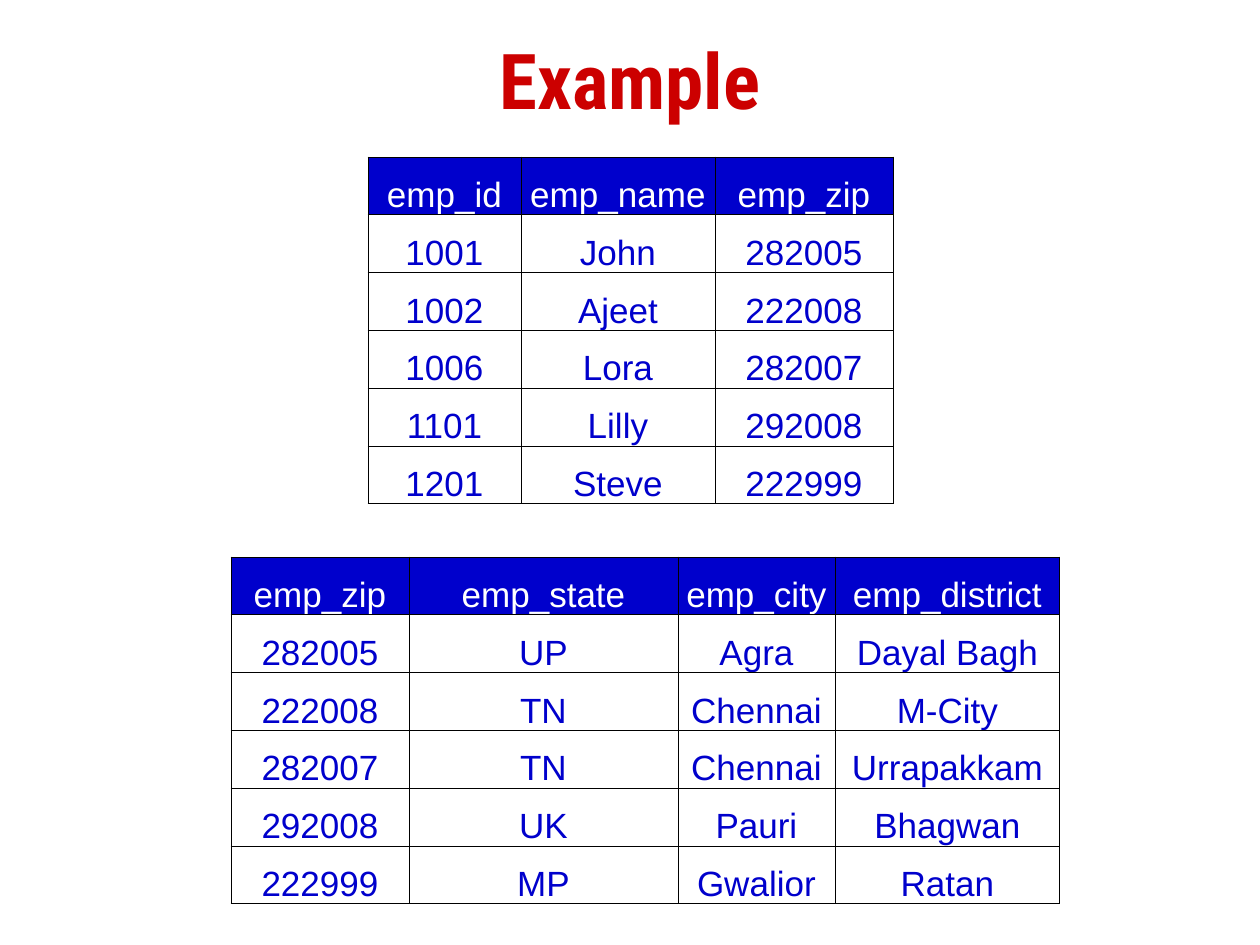
from lxml import etree
from pptx import Presentation
from pptx.dml.color import RGBColor
from pptx.enum.text import MSO_ANCHOR, PP_ALIGN
from pptx.oxml.ns import qn
from pptx.util import Pt

PX = 914400 / 126
RED = RGBColor(0xCC, 0x00, 0x00)
BLUE = RGBColor(0x00, 0x00, 0xCC)
WHITE = RGBColor(0xFF, 0xFF, 0xFF)
BLACK = RGBColor(0x00, 0x00, 0x00)
CENTER = PP_ALIGN.CENTER
MIDDLE, BOTTOM = MSO_ANCHOR.MIDDLE, MSO_ANCHOR.BOTTOM

TITLE = "Example"
TITLE_BOX = (95, 0, 1070, 158)
TABLE_HEIGHT = 347

EMPLOYEES = {
    "left": 368, "top": 157, "columns": [153, 194, 178],
    "rows": [
        ("emp_id", "emp_name", "emp_zip"),
        ("1001", "John", "282005"),
        ("1002", "Ajeet", "222008"),
        ("1006", "Lora", "282007"),
        ("1101", "Lilly", "292008"),
        ("1201", "Steve", "222999"),
    ],
}
ZIP_CODES = {
    "left": 231, "top": 557, "columns": [178, 269, 157, 225],
    "rows": [
        ("emp_zip", "emp_state", "emp_city", "emp_district"),
        ("282005", "UP", "Agra", "Dayal Bagh"),
        ("222008", "TN", "Chennai", "M-City"),
        ("282007", "TN", "Chennai", "Urrapakkam"),
        ("292008", "UK", "Pauri", "Bhagwan"),
        ("222999", "MP", "Gwalior", "Ratan"),
    ],
}


def emu(px):
    return round(px * PX)


def write(frame, text, *, size, font, color, bold=False, space_before=0):
    paragraph = frame.paragraphs[0]
    paragraph.alignment = CENTER
    paragraph.space_before = Pt(space_before)
    run = paragraph.add_run()
    run.text = text
    run.font.size = Pt(size)
    run.font.name = font
    run.font.bold = bold
    run.font.color.rgb = color


def add_borders(cell, color, width):
    """Outline all four sides; call before filling, as the schema puts lines first."""
    properties = cell._tc.get_or_add_tcPr()
    for side in ("a:lnL", "a:lnR", "a:lnT", "a:lnB"):
        line = etree.SubElement(properties, qn(side), w=str(Pt(width)))
        fill = etree.SubElement(line, qn("a:solidFill"))
        etree.SubElement(fill, qn("a:srgbClr"), val=str(color))


def add_data_table(slide, data):
    rows, columns = data["rows"], data["columns"]
    table = slide.shapes.add_table(
        len(rows), len(columns), emu(data["left"]), emu(data["top"]),
        emu(sum(columns)), emu(TABLE_HEIGHT)).table
    table.horz_banding = False
    for column, width in zip(table.columns, columns):
        column.width = emu(width)
    for r, row in enumerate(rows):
        background, ink = (BLUE, WHITE) if r == 0 else (WHITE, BLUE)
        for c, value in enumerate(row):
            cell = table.cell(r, c)
            cell.margin_left = cell.margin_right = cell.margin_top = emu(1)
            cell.margin_bottom = 0
            cell.vertical_anchor = BOTTOM
            add_borders(cell, BLACK, 0.5)
            cell.fill.solid()
            cell.fill.fore_color.rgb = background
            write(cell.text_frame, value, size=20, font="Arial", color=ink, space_before=4)


def main():
    prs = Presentation()
    prs.slide_width, prs.slide_height = emu(1260), emu(945)
    slide = prs.slides.add_slide(prs.slide_layouts[6])

    title = slide.shapes.add_textbox(*map(emu, TITLE_BOX)).text_frame
    title.word_wrap = True
    title.vertical_anchor = MIDDLE
    write(title, TITLE, size=44, font="Roboto Condensed", color=RED, bold=True)

    for data in (EMPLOYEES, ZIP_CODES):
        add_data_table(slide, data)

    prs.save("out.pptx")


if __name__ == "__main__":
    main()
